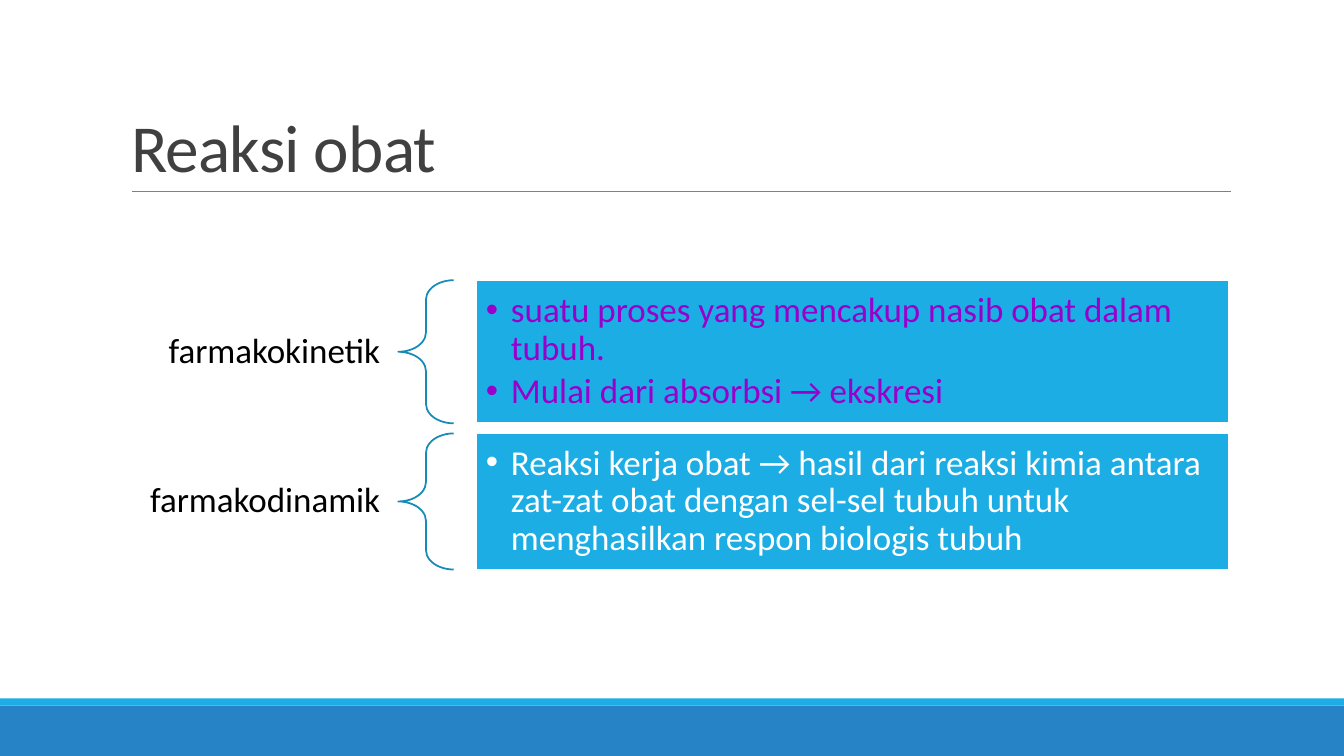
"""Build the slide "Reaksi obat": two terms, each braced to its explanation."""
from lxml import etree
from pptx import Presentation
from pptx.dml.color import RGBColor
from pptx.enum.shapes import MSO_CONNECTOR, MSO_SHAPE
from pptx.enum.text import MSO_ANCHOR, MSO_AUTO_SIZE, PP_ALIGN
from pptx.oxml.ns import qn
from pptx.util import Inches, Pt

RECTANGLE, BRACE = MSO_SHAPE.RECTANGLE, MSO_SHAPE.LEFT_BRACE
STRAIGHT = MSO_CONNECTOR.STRAIGHT
MIDDLE, BOTTOM = MSO_ANCHOR.MIDDLE, MSO_ANCHOR.BOTTOM
LEFT, RIGHT = PP_ALIGN.LEFT, PP_ALIGN.RIGHT
NO_AUTOFIT = MSO_AUTO_SIZE.NONE

BLUE = RGBColor(0x26, 0x83, 0xC6)
CYAN = RGBColor(0x1C, 0xAD, 0xE4)
TEAL = RGBColor(0x16, 0x8B, 0xB7)
GRAY = RGBColor(0x80, 0x80, 0x80)
DARK = RGBColor(0x40, 0x40, 0x40)
PURPLE = RGBColor(0x99, 0x00, 0xCC)
BLACK = RGBColor(0x00, 0x00, 0x00)
WHITE = RGBColor(0xFF, 0xFF, 0xFF)

TERM_X, TERM_W, TERM_H = Inches(1.21), Inches(2.75), Inches(0.54)
BRACE_X, BRACE_W = Inches(3.95), Inches(0.55)
PANEL_X, PANEL_W = Inches(4.72), Inches(7.47)
ROWS_TOP, ROW_GAP = Inches(2.78), Inches(0.1)
ROWS = [
    ("farmakokinetik", Inches(1.42), PURPLE,
     ["suatu proses yang mencakup nasib obat dalam tubuh.",
      "Mulai dari absorbsi → ekskresi"]),
    ("farmakodinamik", Inches(1.35), WHITE,
     ["Reaksi kerja obat → hasil dari reaksi kimia antara zat-zat obat "
      "dengan sel-sel tubuh untuk menghasilkan respon biologis tubuh"]),
]


def style_paragraph(paragraph, size, color, align, line_spacing):
    paragraph.alignment = align
    paragraph.line_spacing = line_spacing
    paragraph.font.name = "Calibri"
    paragraph.font.size = Pt(size)
    paragraph.font.color.rgb = color


def add_plain_shape(kind, left, top, width, height):
    shape = slide.shapes.add_shape(kind, left, top, width, height)
    shape.shadow.inherit = False
    return shape


deck = Presentation()
deck.slide_width, deck.slide_height = Inches(13.33), Inches(7.5)
slide = deck.slides.add_slide(deck.slide_layouts[5])

for top, height, color in ((7, 0.5, BLUE), (6.93, 0.07, CYAN)):
    band = add_plain_shape(RECTANGLE, 0, Inches(top), deck.slide_width, Inches(height))
    band.fill.solid()
    band.fill.fore_color.rgb = color
    band.line.fill.background()

rule = slide.shapes.add_connector(STRAIGHT, Inches(1.31), Inches(1.9), Inches(12.21), Inches(1.9))
rule.line.color.rgb = GRAY
rule.line.width = Pt(0.5)
etree.SubElement(rule._element.spPr, qn("a:effectLst"))

title = slide.shapes.title
title.left, title.top = Inches(1.2), Inches(0.31)
title.width, title.height = Inches(11), Inches(1.59)
title.text_frame.text = "Reaksi obat"
title.text_frame.auto_size = NO_AUTOFIT
title.text_frame.vertical_anchor = BOTTOM
heading = title.text_frame.paragraphs[0]
style_paragraph(heading, 48, DARK, LEFT, 0.85)
heading.runs[0]._r.get_or_add_rPr().set("spc", "-50")

row_top = ROWS_TOP
for name, row_height, text_color, points in ROWS:
    term = slide.shapes.add_textbox(TERM_X, row_top + (row_height - TERM_H) // 2, TERM_W, TERM_H)
    term_frame = term.text_frame
    term_frame.word_wrap = True
    term_frame.vertical_anchor = MIDDLE
    term_frame.margin_left = term_frame.margin_right = Inches(0.19)
    term_frame.margin_top = term_frame.margin_bottom = Inches(0.07)
    term_frame.text = name
    style_paragraph(term_frame.paragraphs[0], 25, BLACK, RIGHT, 0.9)

    brace = add_plain_shape(BRACE, BRACE_X, row_top, BRACE_W, row_height)
    brace.adjustments[0] = 0.35
    brace.fill.background()
    brace.line.color.rgb = TEAL
    brace.line.width = Pt(1.25)

    panel = add_plain_shape(RECTANGLE, PANEL_X, row_top, PANEL_W, row_height)
    panel.fill.solid()
    panel.fill.fore_color.rgb = CYAN
    panel.line.color.rgb = WHITE
    panel.line.width = Pt(1.25)
    panel_frame = panel.text_frame
    panel_frame.word_wrap = True
    panel_frame.vertical_anchor = MIDDLE
    panel_frame.margin_top = panel_frame.margin_bottom = Inches(0.1)
    panel_frame.text = "\n".join(points)
    for point in panel_frame.paragraphs:
        point.space_after = Pt(3.75)
        properties = point._p.get_or_add_pPr()
        properties.set("marL", str(Inches(0.25)))
        properties.set("indent", str(-Inches(0.25)))
        etree.SubElement(properties, qn("a:buFont"), typeface="Arial")
        etree.SubElement(properties, qn("a:buChar"), char="•")
        style_paragraph(point, 25, text_color, LEFT, 0.9)

    row_top += row_height + ROW_GAP

deck.save("out.pptx")
